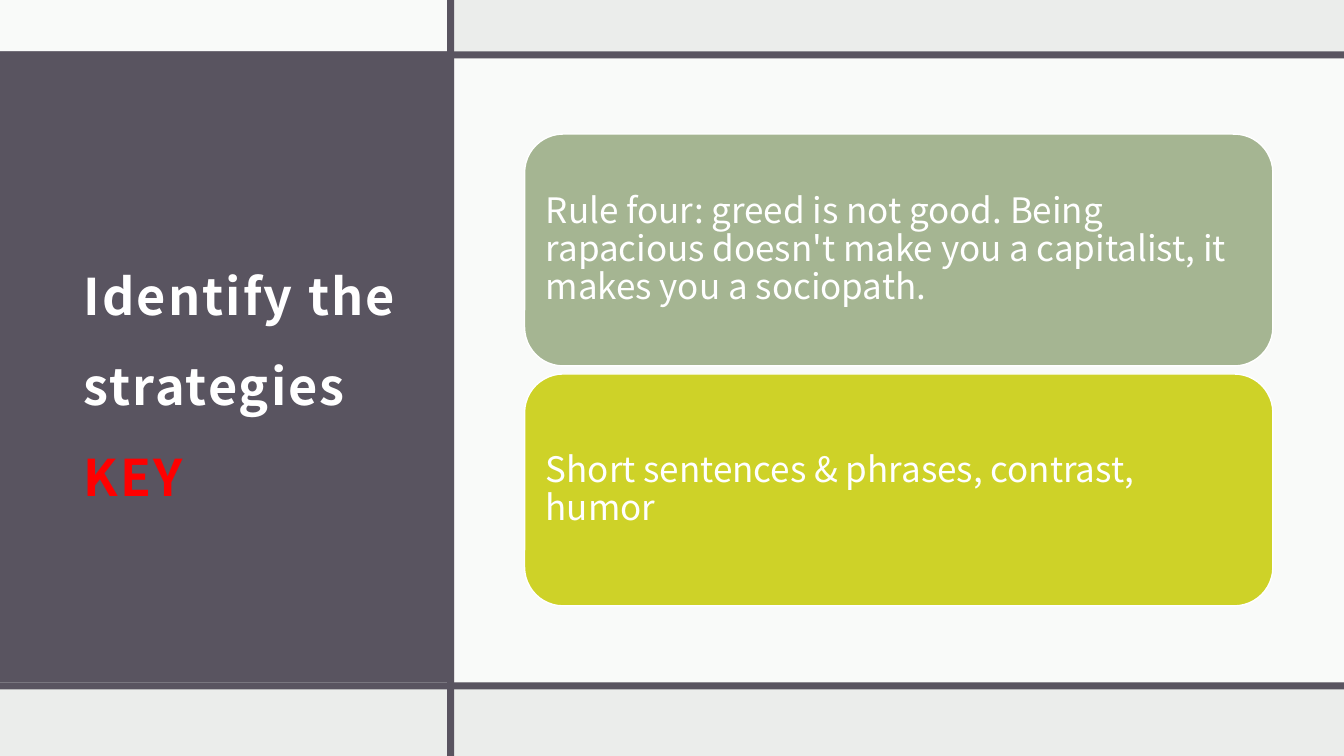
from dataclasses import dataclass

import pptx
import pptx.dml.color
import pptx.enum.shapes
import pptx.enum.text
import pptx.oxml.ns
import pptx.util
from lxml import etree

Pt = pptx.util.Pt
SHAPE = pptx.enum.shapes.MSO_SHAPE


@dataclass(frozen=True)
class Theme:
    font: str = "Noto Sans CJK JP"
    backdrop: str = "EBEDEB"
    slate: str = "595460"
    white: str = "FFFFFF"
    red: str = "FF0000"
    sage: str = "A5B592"
    lime: str = "CED228"
    title_size: float = 36
    card_size: float = 25
    title_tracking: float = 1.5
    veil_opacity: int = 75


THEME = Theme()
WIDTH, HEIGHT = 960, 540
RULE = 5
COLUMN = 319.5  # left edge of the vertical rule
TOP, BOTTOM = 36.75, 487.5  # top edges of the horizontal rules


def rgb(code):
    return pptx.dml.color.RGBColor.from_string(code)


def add_block(slide, box, color, kind=SHAPE.RECTANGLE, opacity=100, outline=None):
    block = slide.shapes.add_shape(kind, *[Pt(length) for length in box])
    block.shadow.inherit = False
    block.fill.solid()
    block.fill.fore_color.rgb = rgb(color)
    if opacity < 100:
        fill = block.element.spPr.find(pptx.oxml.ns.qn("a:solidFill"))
        etree.SubElement(fill[0], pptx.oxml.ns.qn("a:alpha"), val=str(opacity * 1000))
    if outline:
        block.line.color.rgb = rgb(outline)
        block.line.width = Pt(1)
    else:
        block.line.fill.background()
    return block


def set_frame(frame, left, top, right, bottom):
    frame.word_wrap = True
    frame.auto_size = pptx.enum.text.MSO_AUTO_SIZE.NONE
    frame.vertical_anchor = pptx.enum.text.MSO_ANCHOR.MIDDLE
    frame.margin_left, frame.margin_top = Pt(left), Pt(top)
    frame.margin_right, frame.margin_bottom = Pt(right), Pt(bottom)


def add_text(para, text, *, size, color=THEME.white, bold=False, tracking=0, spacing=1.0):
    para.alignment = pptx.enum.text.PP_ALIGN.LEFT
    para.line_spacing = spacing
    span = para.add_run()
    span.text = text
    span.font.name = THEME.font
    span.font.size = Pt(size)
    span.font.bold = bold
    span.font.color.rgb = rgb(color)
    if tracking:
        span._r.get_or_add_rPr().set("spc", str(int(tracking * 100)))


def add_panels(slide, box):
    """Fill the fields between the rules."""
    left, top, width, height = box
    right_column = COLUMN + RULE
    add_block(slide, (left, top + TOP, COLUMN, BOTTOM - TOP), THEME.slate)
    add_block(slide, (left, top, COLUMN, TOP), THEME.white, opacity=THEME.veil_opacity)
    add_block(slide, (left + right_column, top + TOP + RULE, width - right_column,
                      BOTTOM - TOP - RULE), THEME.white, opacity=THEME.veil_opacity)


def add_rules(slide, box):
    left, top, width, height = box
    for offset in (TOP, BOTTOM):
        add_block(slide, (left, top + offset, width, RULE), THEME.slate)
    add_block(slide, (left + COLUMN, top, RULE, height), THEME.slate)


def place_title(slide, box, parts):
    title = slide.shapes.title
    title.element.getparent().append(title.element)  # bring in front of the panels
    title.left, title.top, title.width, title.height = [Pt(length) for length in box]
    set_frame(title.text_frame, 8.64, 8.64, 8.64, 7.2)
    for text, color in parts:
        add_text(title.text_frame.paragraphs[0], text, size=THEME.title_size, color=color,
                 bold=True, tracking=THEME.title_tracking, spacing=1.5)


def add_cards(slide, box, cards, gap=5.75):
    left, top, width, height = box
    card_height = (height - gap * (len(cards) - 1)) / len(cards)
    for index, (text, color) in enumerate(cards):
        card_top = top + index * (card_height + gap)
        card = add_block(slide, (left, card_top, width, card_height), color,
                         kind=SHAPE.ROUNDED_RECTANGLE, outline=THEME.white)
        set_frame(card.text_frame, 7.2, 7.2, 7.2, 7.2)
        add_text(card.text_frame.paragraphs[0], text, size=THEME.card_size, spacing=0.9)


def build_strategy_slide(deck):
    slide = deck.slides.add_slide(deck.slide_layouts[5])
    slide.background.fill.solid()
    slide.background.fill.fore_color.rgb = rgb(THEME.backdrop)
    page = (0, 0, WIDTH, HEIGHT)
    add_panels(slide, page)
    add_rules(slide, page)
    place_title(slide, (51, 94.5, 245.5, 339),
                [("Identify the strategies ", THEME.white), ("KEY", THEME.red)])
    add_cards(slide, (374.75, 95.75, 534.5, 337), [
        ("Rule four: greed is not good. Being rapacious doesn't make you a capitalist, "
         "it makes you a sociopath.", THEME.sage),
        ("Short sentences & phrases, contrast, humor", THEME.lime),
    ])


def main():
    deck = pptx.Presentation()
    deck.slide_width, deck.slide_height = Pt(WIDTH), Pt(HEIGHT)
    build_strategy_slide(deck)
    deck.save("out.pptx")


if __name__ == "__main__":
    main()
